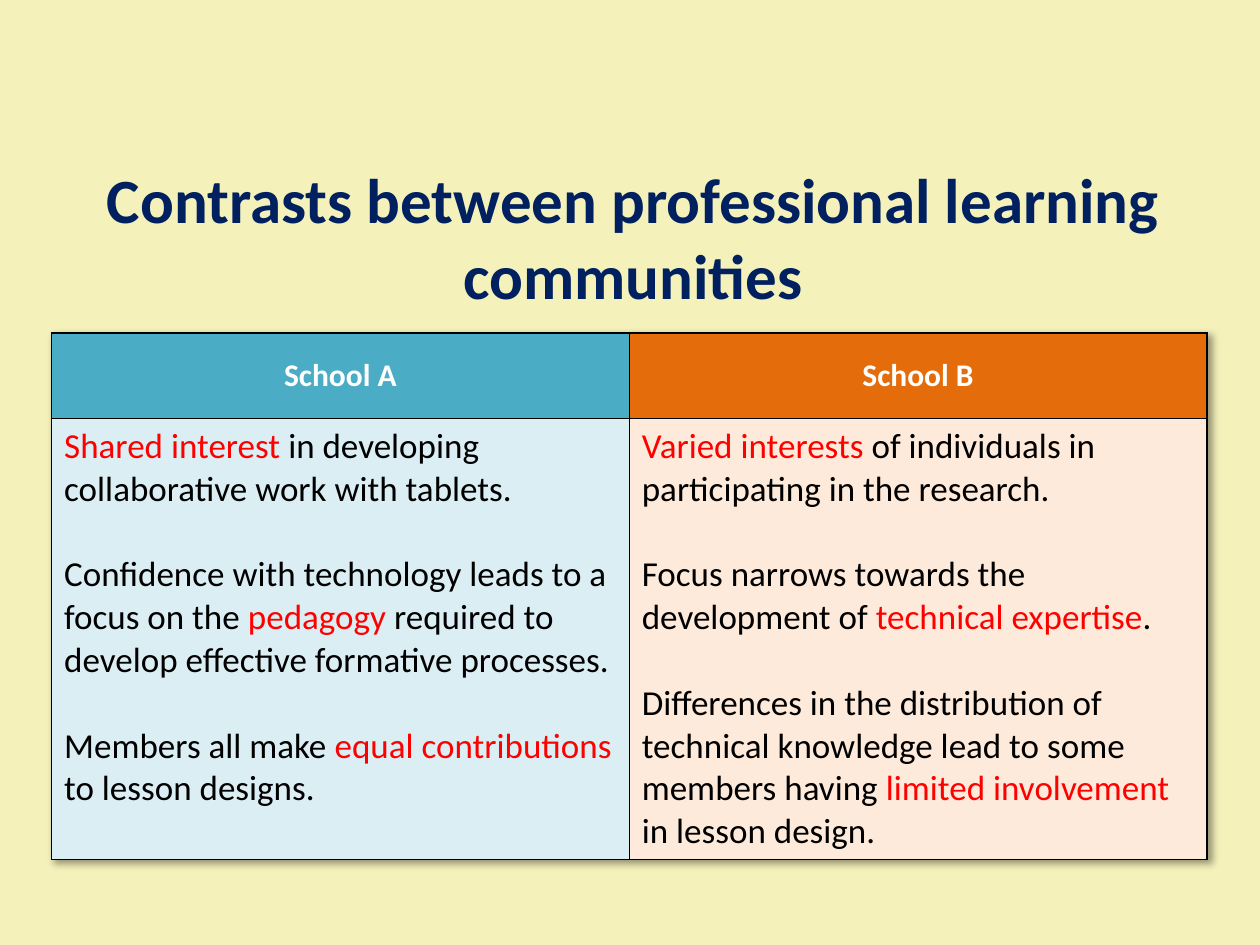
"""Build a slide contrasting the professional learning communities of two schools."""
from lxml.etree import SubElement
from pptx import Presentation
from pptx.dml.color import RGBColor
from pptx.enum.text import MSO_ANCHOR, PP_ALIGN
from pptx.oxml import parse_xml
from pptx.oxml.ns import nsdecls, qn
from pptx.util import Cm, Pt

CREAM = RGBColor(0xF4, 0xF1, 0xBB)
NAVY = RGBColor(0x00, 0x20, 0x60)
WHITE = RGBColor(0xFF, 0xFF, 0xFF)
BLACK = RGBColor(0x00, 0x00, 0x00)
RED = RGBColor(0xFF, 0x00, 0x00)
TEAL = RGBColor(0x4B, 0xAC, 0xC6)
ORANGE = RGBColor(0xE4, 0x6C, 0x0A)
PALE_TEAL = RGBColor(0xDB, 0xEE, 0xF4)
PALE_ORANGE = RGBColor(0xFD, 0xEA, 0xDA)

TITLE = "Contrasts between professional learning communities"
SCHOOLS = [
    ("School A", TEAL, PALE_TEAL, [
        ("", "Shared interest ", "in developing collaborative work with tablets."),
        ("Confidence with technology leads to a focus on the ", "pedagogy",
         " required to develop effective formative processes."),
        ("Members all make ", "equal contributions ", "to lesson designs."),
    ]),
    ("School B", ORANGE, PALE_ORANGE, [
        ("", "Varied interests ", "of individuals in participating in the research."),
        ("Focus narrows towards the development of ", "technical expertise", "."),
        ("Differences in the distribution of technical knowledge lead to some members having ",
         "limited involvement ", "in lesson design."),
    ]),
]


class SlideBuilder:
    def __init__(self, presentation, font_name="Calibri"):
        self.font_name = font_name
        self.slide = presentation.slides.add_slide(presentation.slide_layouts[5])
        background = self.slide.background.fill
        background.solid()
        background.fore_color.rgb = CREAM

    def format_run(self, run, size, color, bold=False):
        run.font.name = self.font_name
        run.font.size = Pt(size)
        run.font.bold = bold
        run.font.color.rgb = color

    def add_title(self, text, left, top, width, height):
        title = self.slide.shapes.title
        title.left, title.top, title.width, title.height = left, top, width, height
        title.text_frame.text = text
        title.text_frame.vertical_anchor = MSO_ANCHOR.MIDDLE
        paragraph = title.text_frame.paragraphs[0]
        paragraph.alignment = PP_ALIGN.CENTER
        self.format_run(paragraph.runs[0], 36, NAVY, bold=True)

    def add_table(self, schools, left, top, width, row_heights):
        frame = self.slide.shapes.add_table(
            len(row_heights), len(schools), left, top, width, sum(row_heights))
        table = frame.table
        table.horz_banding = False
        for row, height in zip(table.rows, row_heights):
            row.height = height
        for column, (name, header_color, body_color, points) in enumerate(schools):
            self.fill_header(table.cell(0, column), name, header_color)
            self.fill_body(table.cell(1, column), points, body_color)
        self.add_shadow(table)

    def add_shadow(self, table):
        effects = parse_xml(
            f'<a:effectLst {nsdecls("a")}><a:outerShdw blurRad="50800" dist="38100" '
            'dir="2700000" algn="tl" rotWithShape="0"><a:srgbClr val="000000">'
            '<a:alpha val="40000"/></a:srgbClr></a:outerShdw></a:effectLst>')
        table._tbl.tblPr.insert(0, effects)

    def style_cell(self, cell, color):
        properties = cell._tc.get_or_add_tcPr()
        for edge in ("a:lnL", "a:lnR", "a:lnT", "a:lnB"):
            line = SubElement(properties, qn(edge), w=str(Pt(1)))
            SubElement(SubElement(line, qn("a:solidFill")), qn("a:srgbClr"), val=str(BLACK))
        cell.fill.solid()
        cell.fill.fore_color.rgb = color

    def fill_header(self, cell, text, color):
        self.style_cell(cell, color)
        cell.vertical_anchor = MSO_ANCHOR.MIDDLE
        cell.text_frame.text = text
        paragraph = cell.text_frame.paragraphs[0]
        paragraph.alignment = PP_ALIGN.CENTER
        self.format_run(paragraph.runs[0], 18, WHITE, bold=True)

    def fill_body(self, cell, points, color):
        self.style_cell(cell, color)
        text_frame = cell.text_frame
        for index, point in enumerate(points):
            paragraph = text_frame.add_paragraph() if index else text_frame.paragraphs[0]
            if index:
                paragraph.space_before = Pt(24.4)
            for text, run_color in zip(point, (BLACK, RED, BLACK)):
                if text:
                    run = paragraph.add_run()
                    run.text = text
                    self.format_run(run, 20, run_color)


def main():
    presentation = Presentation()
    presentation.slide_width = Cm(25.4)
    presentation.slide_height = Cm(19.05)
    builder = SlideBuilder(presentation)
    builder.add_title(TITLE, Cm(0.94), Cm(3.23), Cm(23.65), Cm(3.07))
    builder.add_table(SCHOOLS, Cm(1.04), Cm(6.71), Cm(23.29), [Cm(1.73), Cm(8.74)])
    presentation.save("out.pptx")


if __name__ == "__main__":
    main()
